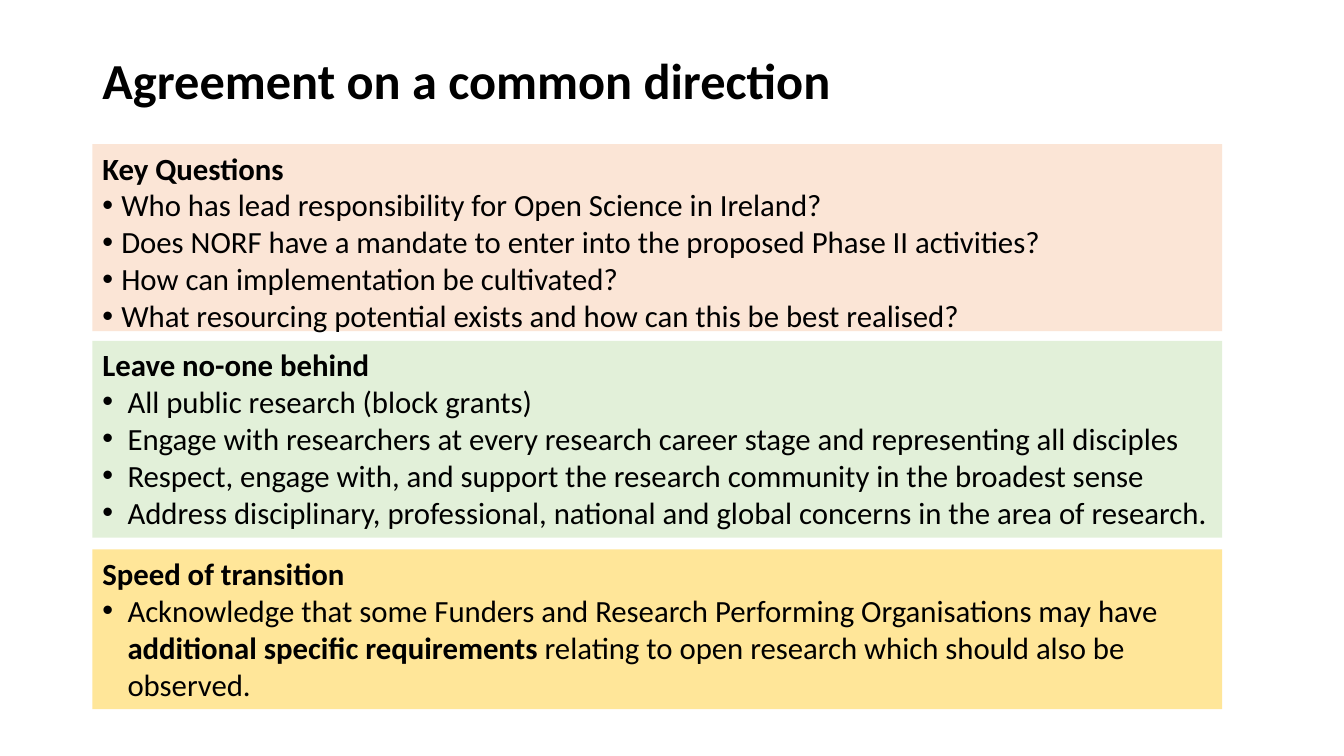
from lxml import etree
from pptx import Presentation
from pptx.dml.color import RGBColor
from pptx.enum.shapes import MSO_SHAPE
from pptx.enum.text import MSO_ANCHOR, MSO_AUTO_SIZE, PP_ALIGN
from pptx.oxml.ns import qn
from pptx.util import Pt

RECTANGLE = MSO_SHAPE.RECTANGLE
TOP, MIDDLE = MSO_ANCHOR.TOP, MSO_ANCHOR.MIDDLE
NO_AUTOSIZE = MSO_AUTO_SIZE.NONE
LEFT = PP_ALIGN.LEFT

BLACK = RGBColor(0x00, 0x00, 0x00)
PEACH = RGBColor(0xFB, 0xE5, 0xD6)
GREEN = RGBColor(0xE2, 0xF0, 0xD9)
YELLOW = RGBColor(0xFF, 0xE6, 0x99)

FONT = "Calibri"
MARGIN, PANEL_WIDTH = 66, 807

QUESTIONS = [
    "Who has lead responsibility for Open Science in Ireland?",
    "Does NORF have a mandate to enter into the proposed Phase II activities?",
    "How can implementation be cultivated?",
    "What resourcing potential exists and how can this be best realised?",
]
INCLUSION = [
    "All public research (block grants)",
    "Engage with researchers at every research career stage and representing all disciples",
    "Respect, engage with, and support the research community in the broadest sense",
    "Address disciplinary, professional, national and global concerns in the area of research.",
]
TRANSITION = [
    [
        ("Acknowledge that some Funders and Research Performing Organisations may have", False),
        (" additional specific requirements ", True),
        ("relating to open research which should also be observed.", False),
    ],
]


def write(paragraph, content, size=22, bold=False, indent=0, spacing=1.0):
    """Write a string or (text, bold) pairs, bulleted when an indent in points is given."""
    paragraph.alignment = LEFT
    paragraph.line_spacing = spacing
    paragraph.space_before = paragraph.space_after = Pt(0)
    properties = paragraph._p.get_or_add_pPr()
    properties.set("marL", str(Pt(indent)))
    properties.set("indent", str(Pt(-indent)))
    if indent:
        etree.SubElement(properties, qn("a:buFont"), typeface="Arial")
        etree.SubElement(properties, qn("a:buChar"), char="•")
    else:
        etree.SubElement(properties, qn("a:buNone"))
    pieces = [(content, bold)] if isinstance(content, str) else content
    for text, strong in pieces:
        run = paragraph.add_run()
        run.text = text
        run.font.name = FONT
        run.font.size = Pt(size)
        run.font.bold = strong
        run.font.color.rgb = BLACK


def place(region, box, anchor):
    """Move a region to its box in points and return its prepared text frame."""
    region.left, region.top, region.width, region.height = map(Pt, box)
    frame = region.text_frame
    frame.word_wrap = True
    frame.auto_size = NO_AUTOSIZE
    frame.vertical_anchor = anchor
    return frame


def fill_title(title, box, text):
    """Set the slide heading."""
    frame = place(title, box, MIDDLE)
    write(frame.paragraphs[0], text, size=36, bold=True, spacing=0.9)


def fill_panel(panel, box, colour, heading, points, indent=18):
    """Colour a panel and set its heading and bulleted points."""
    frame = place(panel, box, TOP)
    panel.fill.solid()
    panel.fill.fore_color.rgb = colour
    panel.line.fill.background()
    write(frame.paragraphs[0], heading, bold=True)
    for point in points:
        write(frame.add_paragraph(), point, indent=indent)


def add_panel(slide, box, colour, heading, points):
    """Add a rectangular panel below the body placeholder."""
    panel = slide.shapes.add_shape(RECTANGLE, *map(Pt, box))
    panel.shadow.inherit = False
    fill_panel(panel, box, colour, heading, points)


def build_direction_slide(presentation):
    """Build the slide with a heading and three stacked panels."""
    slide = presentation.slides.add_slide(presentation.slide_layouts[1])
    title, key_questions = slide.placeholders
    fill_title(title, (MARGIN, 7.2, 828, 104.4), "Agreement on a common direction")
    fill_panel(key_questions, (MARGIN, 103, PANEL_WIDTH, 133.5), PEACH,
               "Key Questions", QUESTIONS, indent=13.5)
    add_panel(slide, (MARGIN, 243.5, PANEL_WIDTH, 140.5), GREEN,
              "Leave no-one behind", INCLUSION)
    add_panel(slide, (MARGIN, 392.5, PANEL_WIDTH, 114), YELLOW,
              "Speed of transition", TRANSITION)


def main():
    """Create and save the presentation."""
    presentation = Presentation()
    presentation.slide_width, presentation.slide_height = Pt(960), Pt(540)
    build_direction_slide(presentation)
    presentation.save("out.pptx")


if __name__ == "__main__":
    main()
